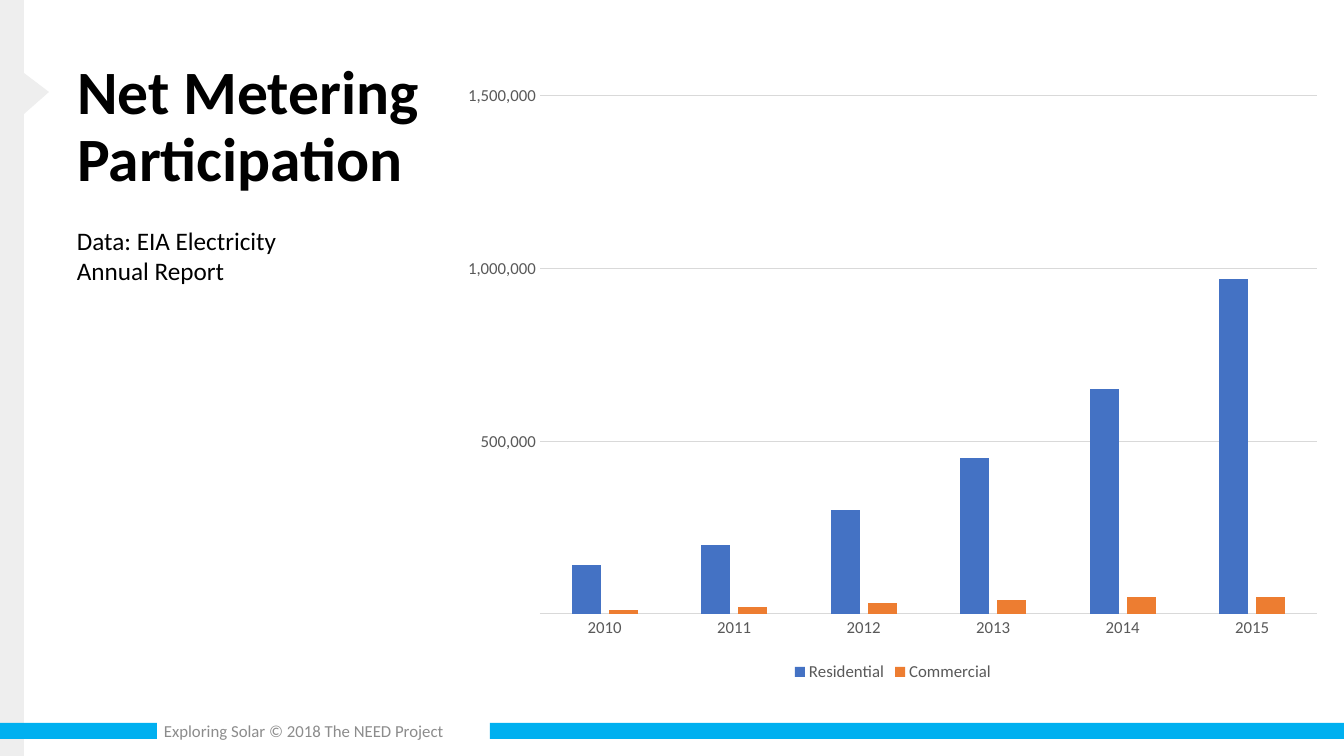
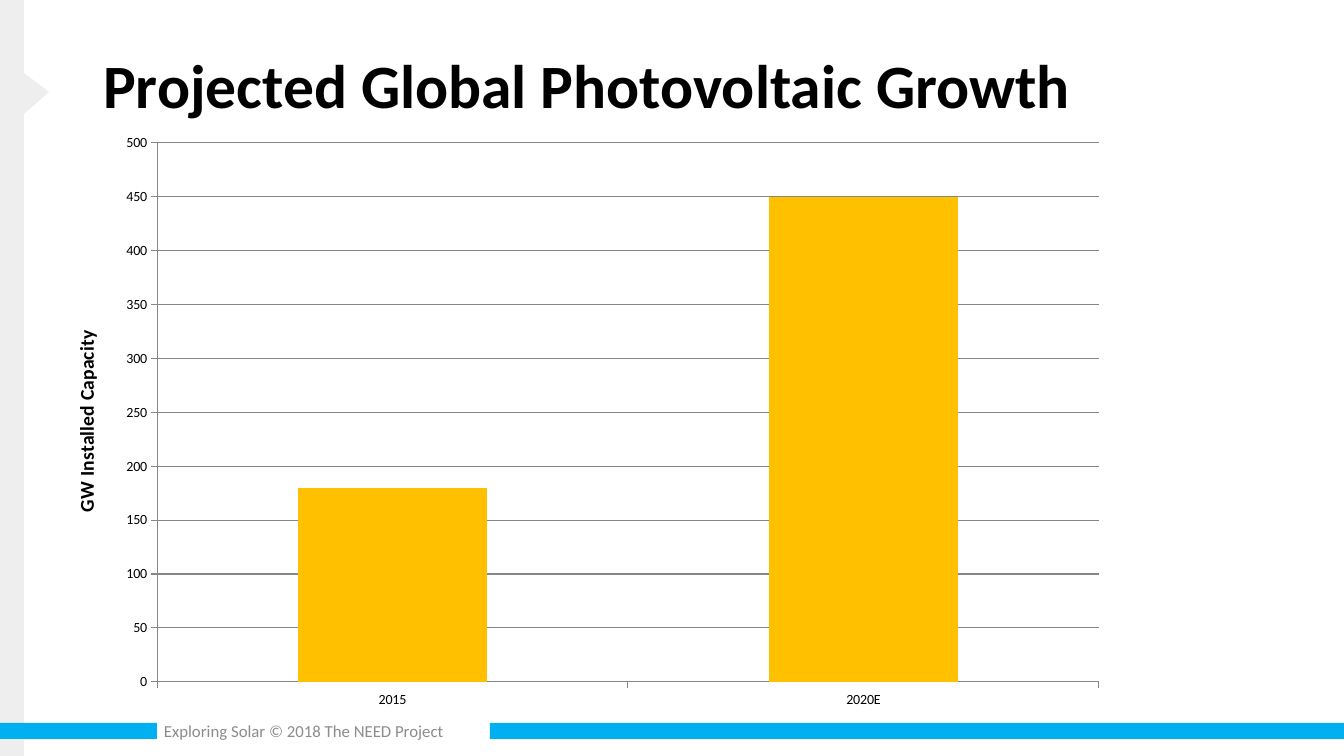
"""Build two slides of column charts on solar power."""
import dataclasses
import typing

import pptx
import pptx.chart.chart
import pptx.chart.data
import pptx.dml.color
import pptx.dml.line
import pptx.enum.chart
import pptx.enum.shapes
import pptx.enum.text
import pptx.oxml
import pptx.oxml.ns
import pptx.shapes.base
import pptx.slide
import pptx.text.text
import pptx.util

EMU_PER_PX: float = 914400 / 100.8
TickMark = pptx.enum.chart.XL_TICK_MARK


@dataclasses.dataclass(frozen=True)
class Theme:
    font: str = "Calibri"
    text: str = "000000"
    footer: str = "8C8C8C"
    side: str = "EEEEEE"
    band: str = "00B0F0"
    axis_text: str = "595959"
    pale_line: str = "D9D9D9"
    dark_line: str = "868686"
    blue: str = "4472C4"
    orange: str = "ED7D31"
    gold: str = "FFC000"
    title_size: int = 44
    body_size: int = 18
    axis_title_size: int = 14
    label_size: int = 12
    small_size: int = 10
    line_width: float = 0.75


class Box(typing.NamedTuple):
    left: int
    top: int
    width: int
    height: int


class Band(typing.NamedTuple):
    box: Box
    color: str


class Series(typing.NamedTuple):
    name: str
    values: tuple[int, ...]
    color: str


@dataclasses.dataclass(frozen=True)
class ColumnChart:
    box: Box
    plot: Box
    categories: tuple[str, ...]
    series: tuple[Series, ...]
    gap: int
    overlap: int
    maximum: int
    step: int
    number_format: str
    label_size: int
    label_color: str
    line_color: str
    tick_mark: TickMark
    value_line: bool
    legend: bool = False
    value_title: str = ""


THEME = Theme()
WIDTH, HEIGHT = 1344, 756
BANDS = (
    Band(Box(0, 0, 24, HEIGHT), THEME.side),
    Band(Box(0, 723, 157, 16), THEME.band),
    Band(Box(490, 723, WIDTH - 490, 16), THEME.band),
)
POINTER = ((24, 73), (49, 92), (24, 114))
FOOTER_BOX = Box(154, 716, 491, 30)
FOOTER = "Exploring Solar © 2018 The NEED Project"

NET_METERING = ColumnChart(
    box=Box(450, 74, 886, 612),
    plot=Box(540, 96, 777, 518),
    categories=tuple(str(year) for year in range(2010, 2016)),
    series=(
        Series("Residential", (140000, 200000, 300000, 450000, 650000, 970000), THEME.blue),
        Series("Commercial", (10000, 20000, 30000, 40000, 50000, 50000), THEME.orange),
    ),
    gap=219,
    overlap=-27,
    maximum=1500000,
    step=500000,
    number_format="#,###",
    label_size=THEME.label_size,
    label_color=THEME.axis_text,
    line_color=THEME.pale_line,
    tick_mark=TickMark.NONE,
    value_line=False,
    legend=True,
)
GLOBAL_GROWTH = ColumnChart(
    box=Box(51, 123, 1068, 597),
    plot=Box(157, 143, 942, 539),
    categories=("2015", "2020E"),
    series=(Series("Series 1", (180, 450), THEME.gold),),
    gap=150,
    overlap=0,
    maximum=500,
    step=50,
    number_format="General",
    label_size=THEME.small_size,
    label_color=THEME.text,
    line_color=THEME.dark_line,
    tick_mark=TickMark.OUTSIDE,
    value_line=True,
    value_title="GW Installed Capacity",
)


def px(length: int) -> pptx.util.Emu:
    """Turn pixels into EMU."""
    return pptx.util.Emu(round(length * EMU_PER_PX))


def place(box: Box) -> tuple[pptx.util.Emu, ...]:
    """Give the four lengths of a box in EMU."""
    return tuple(px(length) for length in box)


def rgb(color: str) -> pptx.dml.color.RGBColor:
    """Read a hexadecimal colour."""
    return pptx.dml.color.RGBColor.from_string(color)


def style_font(font: pptx.text.text.Font, size: int, color: str, bold: bool = False) -> None:
    """Set the face, size, colour and weight of a font."""
    font.name = THEME.font
    font.size = pptx.util.Pt(size)
    font.bold = bold
    font.color.rgb = rgb(color)


def style_line(line: pptx.dml.line.LineFormat, color: str) -> None:
    """Set the colour of a chart line."""
    line.color.rgb = rgb(color)
    line.width = pptx.util.Pt(THEME.line_width)


def style_shape(shape: pptx.shapes.base.BaseShape, color: str) -> None:
    """Give a shape a plain fill without outline or shadow."""
    shape.shadow.inherit = False
    shape.fill.solid()
    shape.fill.fore_color.rgb = rgb(color)
    shape.line.fill.background()


def add_text(slide: pptx.slide.Slide, box: Box, text: str, size: int, color: str,
             anchor: pptx.enum.text.MSO_ANCHOR) -> None:
    """Add a wrapped text box with one run."""
    frame = slide.shapes.add_textbox(*place(box)).text_frame
    frame.word_wrap = True
    frame.vertical_anchor = anchor
    run = frame.paragraphs[0].add_run()
    run.text = text
    style_font(run.font, size, color)


def add_slide(presentation: pptx.presentation.Presentation, title: str, box: Box) -> pptx.slide.Slide:
    """Add a slide with the shared bands, pointer, footer and title."""
    slide = presentation.slides.add_slide(presentation.slide_layouts.get_by_name("Title Only"))
    for band in BANDS:
        rectangle = pptx.enum.shapes.MSO_SHAPE.RECTANGLE
        style_shape(slide.shapes.add_shape(rectangle, *place(band.box)), band.color)
    start, *corners = POINTER
    builder = slide.shapes.build_freeform(*start, scale=EMU_PER_PX)
    builder.add_line_segments(corners, close=True)
    style_shape(builder.convert_to_shape(), THEME.side)

    shape = slide.shapes.title
    shape.left, shape.top, shape.width, shape.height = place(box)
    frame = shape.text_frame
    frame.word_wrap = True
    frame.auto_size = pptx.enum.text.MSO_AUTO_SIZE.NONE
    frame.vertical_anchor = pptx.enum.text.MSO_ANCHOR.MIDDLE
    paragraph = frame.paragraphs[0]
    paragraph.alignment = pptx.enum.text.PP_ALIGN.LEFT
    paragraph.line_spacing = 0.9
    run = paragraph.add_run()
    run.text = title
    style_font(run.font, THEME.title_size, THEME.text, bold=True)

    add_text(slide, FOOTER_BOX, FOOTER, THEME.label_size, THEME.footer,
             pptx.enum.text.MSO_ANCHOR.MIDDLE)
    return slide


def set_plot_area(chart: pptx.chart.chart.Chart, box: Box, plot: Box) -> None:
    """Fix the inner plot area of a chart."""
    fractions = {
        "x": (plot.left - box.left) / box.width,
        "y": (plot.top - box.top) / box.height,
        "w": plot.width / box.width,
        "h": plot.height / box.height,
    }
    modes = '<c:layoutTarget val="inner"/><c:xMode val="edge"/><c:yMode val="edge"/>'
    sizes = "".join(f'<c:{name} val="{value:.4f}"/>' for name, value in fractions.items())
    layout = pptx.oxml.parse_xml(
        f'<c:layout {pptx.oxml.ns.nsdecls("c")}><c:manualLayout>{modes}{sizes}</c:manualLayout></c:layout>'
    )
    area = chart.element.find(".//" + pptx.oxml.ns.qn("c:plotArea"))
    for existing in area.findall(pptx.oxml.ns.qn("c:layout")):
        area.remove(existing)
    area.insert(0, layout)


def add_column_chart(slide: pptx.slide.Slide, design: ColumnChart) -> None:
    """Add a clustered column chart."""
    data = pptx.chart.data.CategoryChartData()
    data.categories = design.categories
    for series in design.series:
        data.add_series(series.name, series.values)
    kind = pptx.enum.chart.XL_CHART_TYPE.COLUMN_CLUSTERED
    chart = slide.shapes.add_chart(kind, *place(design.box), data).chart
    style_font(chart.font, THEME.small_size, THEME.text)
    chart.has_title = False
    chart.has_legend = design.legend
    if design.legend:
        chart.legend.position = pptx.enum.chart.XL_LEGEND_POSITION.BOTTOM
        chart.legend.include_in_layout = False
        style_font(chart.legend.font, design.label_size, design.label_color)

    columns = chart.plots[0]
    columns.vary_by_categories = False
    columns.gap_width = design.gap
    columns.overlap = design.overlap
    for column, series in zip(columns.series, design.series):
        column.format.fill.solid()
        column.format.fill.fore_color.rgb = rgb(series.color)

    for axis in (chart.category_axis, chart.value_axis):
        axis.major_tick_mark = design.tick_mark
        axis.minor_tick_mark = TickMark.NONE
        style_font(axis.tick_labels.font, design.label_size, design.label_color)
        style_line(axis.format.line, design.line_color)
    values = chart.value_axis
    values.minimum_scale = 0
    values.maximum_scale = design.maximum
    values.major_unit = design.step
    values.has_major_gridlines = True
    style_line(values.major_gridlines.format.line, design.line_color)
    values.tick_labels.number_format = design.number_format
    values.tick_labels.number_format_is_linked = False
    if not design.value_line:
        values.format.line.fill.background()
    if design.value_title:
        run = values.axis_title.text_frame.paragraphs[0].add_run()
        run.text = design.value_title
        style_font(run.font, THEME.axis_title_size, THEME.text, bold=True)
    set_plot_area(chart, design.box, design.plot)


def main() -> None:
    """Build and save the presentation."""
    presentation = pptx.Presentation()
    presentation.slide_width, presentation.slide_height = px(WIDTH), px(HEIGHT)

    slide = add_slide(presentation, "Net Metering Participation", Box(67, 40, 369, 176))
    add_text(slide, Box(67, 220, 235, 72), "Data: EIA Electricity Annual Report",
             THEME.body_size, THEME.text, pptx.enum.text.MSO_ANCHOR.TOP)
    add_column_chart(slide, NET_METERING)

    slide = add_slide(presentation, "Projected Global Photovoltaic Growth", Box(93, 40, 1162, 97))
    add_column_chart(slide, GLOBAL_GROWTH)

    presentation.save("out.pptx")


if __name__ == "__main__":
    main()
